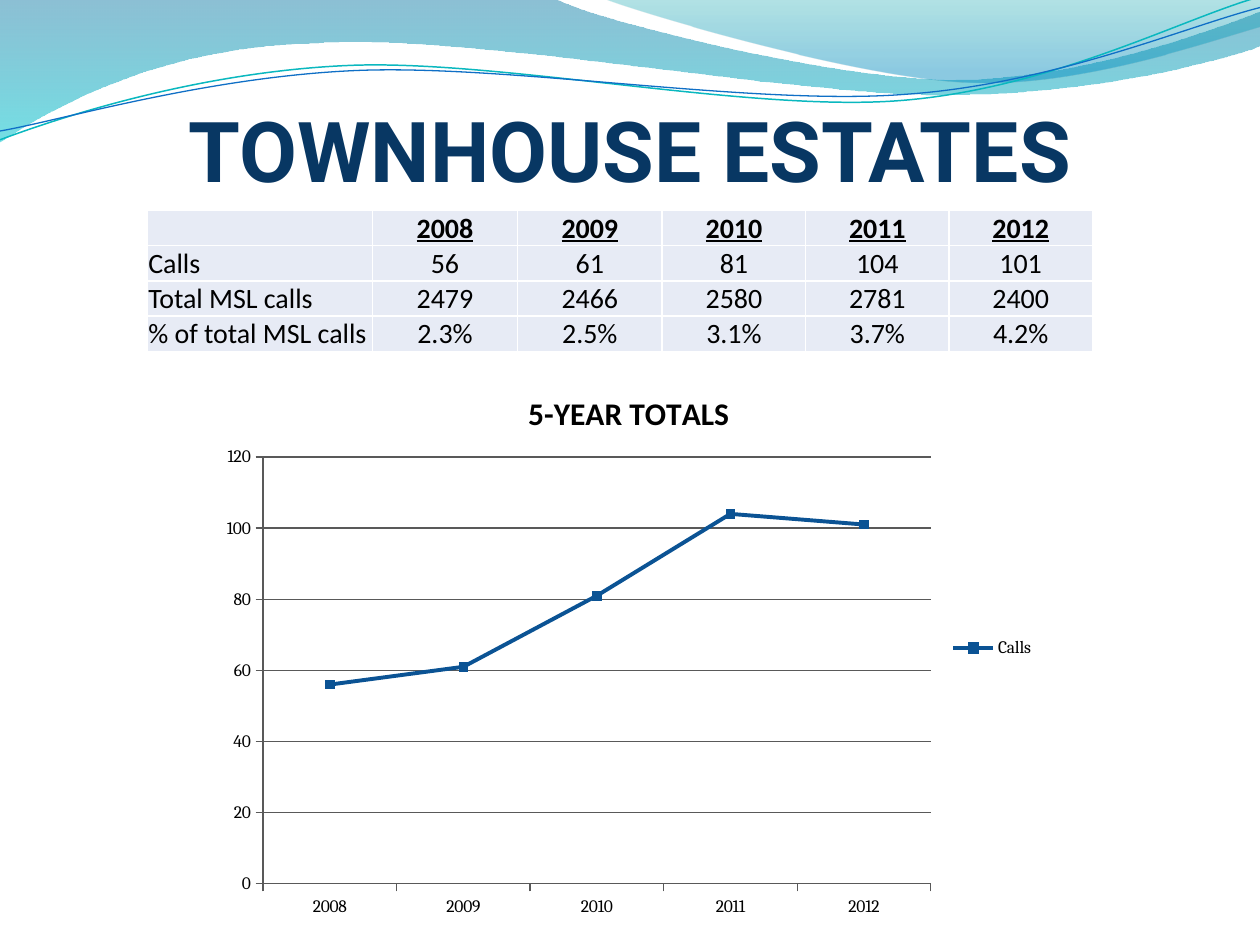
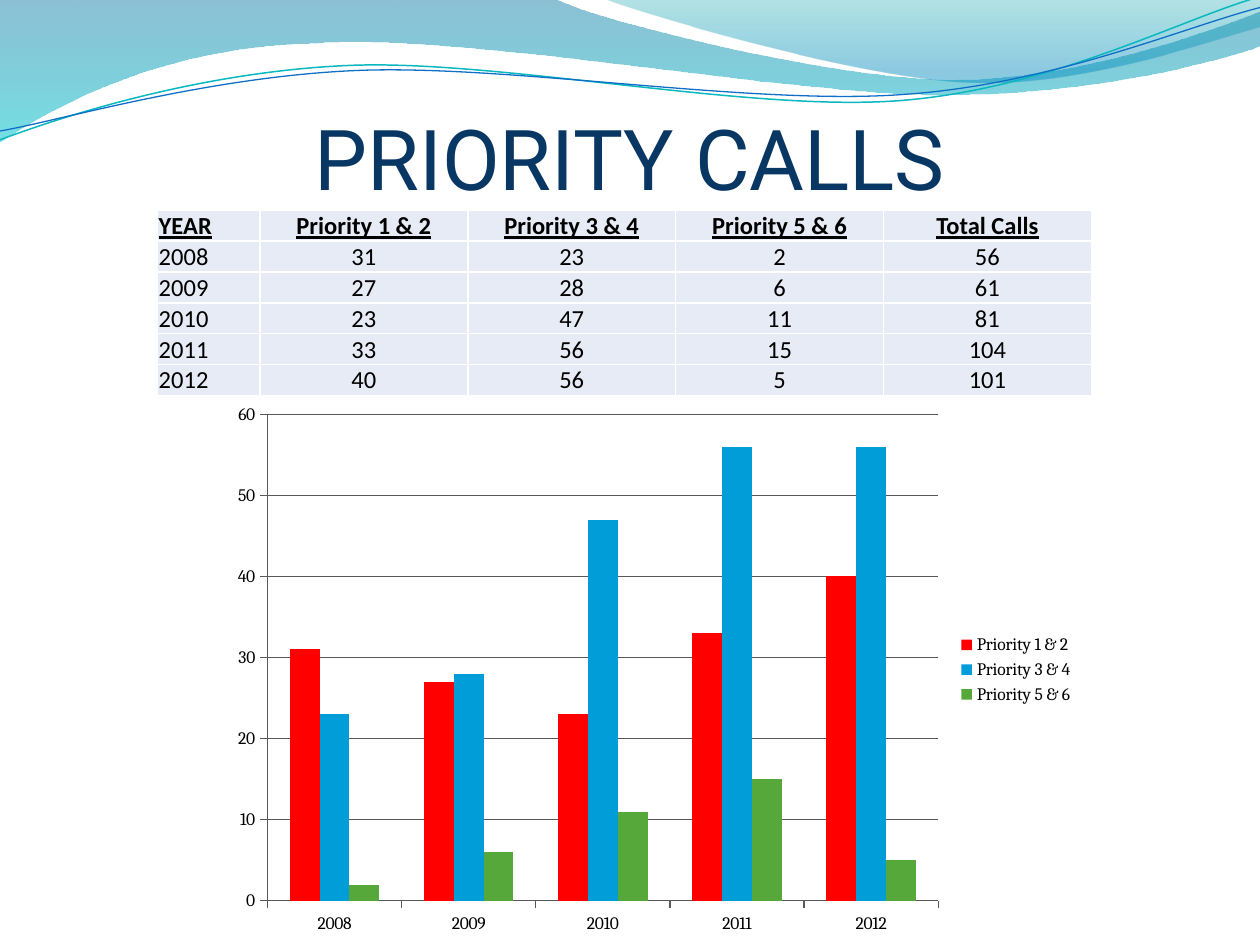
"""Build two slides of emergency call statistics, each with a table and a chart."""
from dataclasses import dataclass

from lxml.etree import SubElement
from pptx import Presentation
from pptx.chart.chart import Chart
from pptx.chart.data import CategoryChartData
from pptx.dml.color import RGBColor
from pptx.enum.chart import XL_CHART_TYPE, XL_LEGEND_POSITION, XL_MARKER_STYLE, XL_TICK_MARK
from pptx.enum.text import MSO_ANCHOR, MSO_AUTO_SIZE, PP_ALIGN
from pptx.oxml import parse_xml
from pptx.oxml.ns import nsdecls, qn
from pptx.presentation import Presentation as Deck
from pptx.shapes.autoshape import Shape
from pptx.slide import Slide
from pptx.table import _Cell as Cell
from pptx.util import Cm, Pt

COLORS = {
    "title": "083763", "text": "000000", "cell": "E7EBF5", "border": "FFFFFF", "axis": "595959",
    "calls": "0B5394", "high": "FF0000", "middle": "009DD9", "low": "55A839",
    "teal line": "0AB8BF", "blue line": "0F6FC6",
    "deep blue": "0074A1", "aqua": "00C6CF", "teal": "00A1A9", "sky": "008BBF",
}
YEARS = ["2008", "2009", "2010", "2011", "2012"]
GRID = 2.54

Point = tuple[float, float]
Frame = tuple[float, float, float, float]


@dataclass
class Wave:
    """An outline in tenths of the slide width: pairs are lines, sextets are curves."""
    start: Point
    steps: list[tuple[float, ...]]
    stops: tuple[tuple[str, float, int], ...] = ()
    line: str = ""
    width: float = 0


@dataclass
class TableBlock:
    """A table with its place, column widths and row height in centimetres."""
    rows: list[list[str]]
    left: float
    top: float
    columns: list[float]
    row_height: float
    size: int


@dataclass
class ChartBlock:
    """A chart with its frame, inner plot area, scale and series."""
    kind: XL_CHART_TYPE
    frame: Frame
    plot: Frame
    maximum: int
    step: int
    series: list[tuple[str, list[int], str]]
    title: str = ""


@dataclass
class StatisticsPage:
    """The contents of one slide."""
    title: str
    title_top: float
    title_height: float
    bold: bool
    table: TableBlock
    chart: ChartBlock


WAVES = [
    Wave((0, 0), [(4.4, -0.01), (4.76, 0.17, 6.64, 0.63, 7.58, 0.63),
                  (8.53, 0.63, 9.58, 0.26, 10, 0.09), (10.01, 0.36),
                  (9.83, 0.44, 8.7, 0.76, 7.46, 0.75), (6.22, 0.75, 3.82, 0.28, 2.57, 0.34),
                  (1.29, 0.36, 0.46, 0.83, -0.01, 1.13), (0, 0)],
         stops=(("deep blue", 0, 45), ("aqua", 1, 55))),
    Wave((4.79, -0.01), [(5.09, 0.11, 6.82, 0.62, 7.69, 0.65),
                         (8.56, 0.69, 9.61, 0.32, 10, 0.21), (10, 0), (4.79, -0.01)],
         stops=(("teal", 0, 30), ("sky", 0.8, 45))),
    Wave((0, 1.11), [(0.48, 0.93, 1.58, 0.57, 2.77, 0.52), (3.95, 0.47, 5.93, 0.89, 7.13, 0.8),
                     (8.33, 0.71, 9.38, 0.15, 9.98, -0.02)], line="teal line", width=0.85),
    Wave((0, 1.04), [(0.47, 0.96, 1.64, 0.61, 2.83, 0.56), (4.03, 0.51, 5.97, 0.84, 7.17, 0.75),
                     (8.36, 0.67, 9.41, 0.21, 10, 0.06)], line="blue line", width=0.75),
]

CALLS = [56, 61, 81, 104, 101]
PRIORITIES = [
    ("Priority 1 & 2", [31, 27, 23, 33, 40], "high"),
    ("Priority 3 & 4", [23, 28, 47, 56, 56], "middle"),
    ("Priority 5 & 6", [2, 6, 11, 15, 5], "low"),
]

PAGES = [
    StatisticsPage(
        "TOWNHOUSE ESTATES", 1.96, 2.06, True,
        TableBlock([["", *YEARS],
                    ["Calls", *map(str, CALLS)],
                    ["Total MSL calls", "2479", "2466", "2580", "2781", "2400"],
                    ["% of total MSL calls", "2.3%", "2.5%", "3.1%", "3.7%", "4.2%"]],
                   2.97, 4.24, [4.54, 2.92, 2.92, 2.89, 2.89, 2.89], 0.71, 16),
        ChartBlock(XL_CHART_TYPE.LINE_MARKERS, (4.24, 7.42, 16.87, 11.28),
                   (0.063, 0.159, 0.798, 0.763), 120, 20,
                   [("Calls", CALLS, "calls")], "5-YEAR TOTALS")),
    StatisticsPage(
        "PRIORITY CALLS", 2.34, 1.85, False,
        TableBlock([["YEAR", *(name for name, _, _ in PRIORITIES), "Total Calls"],
                    *([year, *(str(values[index]) for _, values, _ in PRIORITIES),
                       str(CALLS[index])] for index, year in enumerate(YEARS))],
                   3.18, 4.24, [2.06] + [4.19] * 4, 0.61, 14),
        ChartBlock(XL_CHART_TYPE.COLUMN_CLUSTERED, (4.45, 7.95, 17.45, 11.1),
                   (0.054, 0.036, 0.775, 0.884), 60, 10, PRIORITIES)),
]


def color(name: str) -> RGBColor:
    """Return a named colour."""
    return RGBColor.from_string(COLORS[name])


def draw_outline(page: Slide, wave: Wave) -> Shape:
    """Build a freeform through all points, then join the points of each curve."""
    points = [(Cm(step[index] * GRID), Cm(step[index + 1] * GRID))
              for step in wave.steps for index in range(0, len(step), 2)]
    builder = page.shapes.build_freeform(*(Cm(value * GRID) for value in wave.start))
    builder.add_line_segments(points, close=bool(wave.stops))
    shape = builder.convert_to_shape()
    segments = iter(list(shape.element.iter(qn("a:lnTo"))))
    for step in wave.steps:
        segment = next(segments)
        if len(step) == 6:
            segment.tag = qn("a:cubicBezTo")
            for _ in range(2):
                following = next(segments)
                segment.append(following[0])
                following.getparent().remove(following)
    return shape


def add_waves(deck: Deck, page: Slide) -> None:
    """Draw the waves and place them at the back of the slide master."""
    tree = deck.slide_master.shapes.element
    for index, wave in enumerate(WAVES):
        shape = draw_outline(page, wave)
        shape.shadow.inherit = False
        if wave.stops:
            shape.line.fill.background()
            shape.fill.gradient()
            shape.fill.gradient_angle = 270
            for stop, (name, position, _) in zip(shape.fill.gradient_stops, wave.stops):
                stop.color.rgb = color(name)
                stop.position = position
            marks = shape.element.iter(qn("a:srgbClr"))
            for mark, (_, _, opacity) in zip(marks, wave.stops):
                SubElement(mark, qn("a:alpha"), val=str(opacity * 1000))
        else:
            shape.fill.background()
            shape.line.color.rgb = color(wave.line)
            shape.line.width = Pt(wave.width)
        shape.element.nvSpPr.cNvPr.set("id", str(101 + index))
        tree.insert(2 + index, shape.element)


def set_title(page: Slide, content: StatisticsPage) -> None:
    """Place and format the title placeholder."""
    title = page.shapes.title
    title.left, title.top = Cm(1.27), Cm(content.title_top)
    title.width, title.height = Cm(22.86), Cm(content.title_height)
    frame = title.text_frame
    frame.text = content.title
    frame.auto_size = MSO_AUTO_SIZE.NONE
    frame.vertical_anchor = MSO_ANCHOR.BOTTOM
    frame.margin_left = frame.margin_right = frame.margin_bottom = 0
    frame.margin_top = Cm(0.13)
    para = frame.paragraphs[0]
    para.alignment = PP_ALIGN.CENTER
    para.font.name, para.font.size, para.font.bold = "Roboto", Pt(48), content.bold
    para.font.color.rgb = color("title")


def format_cell(cell: Cell, size: int, heading: bool, first: bool) -> None:
    """Set the fill, borders, margins and font of a table cell."""
    cell.vertical_anchor = MSO_ANCHOR.BOTTOM
    cell.margin_left = cell.margin_right = cell.margin_top = Cm(0.02)
    cell.margin_bottom = 0
    para = cell.text_frame.paragraphs[0]
    para.alignment = PP_ALIGN.LEFT if first else PP_ALIGN.CENTER
    para.font.name, para.font.size = "Calibri", Pt(size)
    para.font.bold = para.font.underline = heading
    para.font.color.rgb = color("text")
    properties = cell._tc.get_or_add_tcPr()
    for side in ("lnL", "lnR", "lnT", "lnB"):
        border = SubElement(properties, qn(f"a:{side}"), w=str(Pt(1)))
        SubElement(SubElement(border, qn("a:solidFill")), qn("a:srgbClr"), val=COLORS["border"])
    cell.fill.solid()
    cell.fill.fore_color.rgb = color("cell")


def add_table(page: Slide, block: TableBlock) -> None:
    """Add a table of call counts."""
    table = page.shapes.add_table(
        len(block.rows), len(block.columns), Cm(block.left), Cm(block.top),
        Cm(sum(block.columns)), Cm(block.row_height * len(block.rows))).table
    table.first_row = table.horz_banding = False
    for column, width in zip(table.columns, block.columns):
        column.width = Cm(width)
    for row_index, texts in enumerate(block.rows):
        table.rows[row_index].height = Cm(block.row_height)
        for column_index, text in enumerate(texts):
            cell = table.cell(row_index, column_index)
            if text:
                cell.text = text
            format_cell(cell, block.size, row_index == 0, column_index == 0)


def set_plot_area(chart: Chart, plot: Frame) -> None:
    """Fix the inner plot area as fractions of the chart."""
    area = chart.element.find(".//" + qn("c:plotArea"))
    for layout in area.findall(qn("c:layout")):
        area.remove(layout)
    sizes = "".join(f'<c:{key} val="{value}"/>' for key, value in zip("xywh", plot))
    area.insert(0, parse_xml(
        f'<c:layout {nsdecls("c")}><c:manualLayout><c:layoutTarget val="inner"/>'
        f'<c:xMode val="edge"/><c:yMode val="edge"/>{sizes}</c:manualLayout></c:layout>'))


def add_chart(page: Slide, block: ChartBlock) -> None:
    """Add a chart of calls by year."""
    data = CategoryChartData()
    data.categories = YEARS
    for name, values, _ in block.series:
        data.add_series(name, values)
    chart = page.shapes.add_chart(block.kind, *map(Cm, block.frame), data).chart
    chart.font.name, chart.font.size = "Cambria", Pt(10)
    chart.font.color.rgb = color("text")
    chart.has_title = bool(block.title)
    if block.title:
        chart.chart_title.text_frame.text = block.title
        font = chart.chart_title.text_frame.paragraphs[0].font
        font.name, font.size, font.bold = "Calibri", Pt(18), True
        font.color.rgb = color("text")
    chart.has_legend = True
    chart.legend.position = XL_LEGEND_POSITION.RIGHT
    chart.legend.include_in_layout = False
    values_axis = chart.value_axis
    values_axis.minimum_scale, values_axis.maximum_scale = 0, block.maximum
    values_axis.major_unit = block.step
    values_axis.has_major_gridlines = True
    for axis in (chart.category_axis, values_axis):
        axis.major_tick_mark = XL_TICK_MARK.OUTSIDE
    for part in (chart.category_axis, values_axis, values_axis.major_gridlines):
        part.format.line.color.rgb = color("axis")
        part.format.line.width = Pt(0.75)
    plot = chart.plots[0]
    plot.vary_by_categories = False
    is_line = block.kind == XL_CHART_TYPE.LINE_MARKERS
    if not is_line:
        plot.gap_width, plot.overlap = 150, 0
    for series, (_, _, name) in zip(plot.series, block.series):
        fill = series.format.fill
        if is_line:
            series.smooth = False
            series.format.line.color.rgb = color(name)
            series.format.line.width = Pt(2.25)
            series.marker.style, series.marker.size = XL_MARKER_STYLE.SQUARE, 5
            series.marker.format.line.color.rgb = color(name)
            fill = series.marker.format.fill
        fill.solid()
        fill.fore_color.rgb = color(name)
    set_plot_area(chart, block.plot)


def main() -> None:
    """Build and save the deck."""
    deck = Presentation()
    deck.slide_width, deck.slide_height = Cm(25.4), Cm(19.05)
    for index, content in enumerate(PAGES):
        page = deck.slides.add_slide(deck.slide_layouts[5])
        if index == 0:
            add_waves(deck, page)
        set_title(page, content)
        add_table(page, content.table)
        add_chart(page, content.chart)
    deck.save("out.pptx")


if __name__ == "__main__":
    main()
